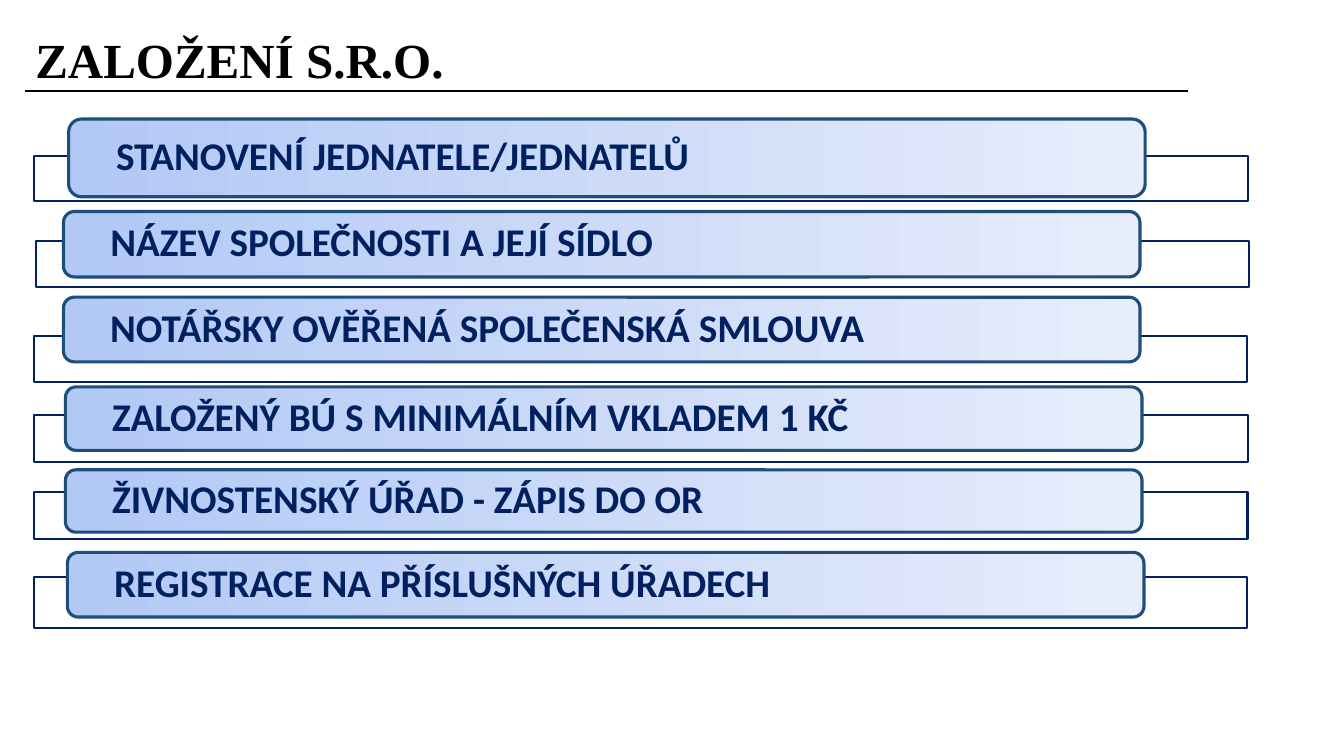
from lxml import etree
from pptx import Presentation
from pptx.dml.color import RGBColor
from pptx.enum.shapes import MSO_CONNECTOR, MSO_SHAPE
from pptx.enum.text import MSO_ANCHOR, PP_ALIGN
from pptx.oxml.ns import qn
from pptx.util import Cm, Pt

NAVY = "002060"
BAR_WIDTH = 27.13

# text, frame (left, top, width, height), bar (left, top, height), all in cm
STEPS = [
    ("STANOVENÍ JEDNATELE/JEDNATELŮ", (0.86, 3.94, 30.6, 1.12), (1.73, 3, 1.96)),
    ("NÁZEV SPOLEČNOSTI A JEJÍ SÍDLO", (0.91, 6.07, 30.56, 1.17), (1.6, 5.33, 1.65)),
    ("NOTÁŘSKY OVĚŘENÁ SPOLEČENSKÁ SMLOUVA", (0.86, 8.46, 30.56, 1.17), (1.6, 7.49, 1.63)),
    ("ZALOŽENÝ BÚ S MINIMÁLNÍM VKLADEM 1 KČ", (0.86, 10.46, 30.6, 1.19), (1.65, 9.75, 1.6)),
    ("ŽIVNOSTENSKÝ ÚŘAD - ZÁPIS DO OR", (0.86, 12.4, 30.58, 1.19), (1.65, 11.84, 1.57)),
    ("REGISTRACE NA PŘÍSLUŠNÝCH ÚŘADECH", (0.86, 14.53, 30.56, 1.3), (1.7, 13.92, 1.63)),
]


def color(hex_code):
    return RGBColor.from_string(hex_code)


def set_text(shape, text, size, font, hex_code, inset_x, inset_y):
    tf = shape.text_frame
    tf.word_wrap = True
    tf.vertical_anchor = MSO_ANCHOR.MIDDLE
    tf.margin_left = tf.margin_right = Cm(inset_x)
    tf.margin_top = tf.margin_bottom = Cm(inset_y)
    p = tf.paragraphs[0]
    p.alignment = PP_ALIGN.LEFT
    p.line_spacing = 0.9
    r = p.add_run()
    r.text = text
    r.font.size = Pt(size)
    r.font.name = font
    r.font.bold = True
    r.font.color.rgb = color(hex_code)


def add_box(s, kind, box, line_hex, line_width):
    sp = s.shapes.add_shape(kind, *map(Cm, box))
    sp.shadow.inherit = False
    sp.line.color.rgb = color(line_hex)
    sp.line.width = Pt(line_width)
    return sp


def add_title(s, left, top, width, height):
    """Place the heading and the rule that underlines it."""
    sp = s.shapes.add_textbox(Cm(left), Cm(top), Cm(width), Cm(height))
    set_text(sp, "ZALOŽENÍ S.R.O.", 35, "Times New Roman", "000000", 0.25, 0.13)
    y = Cm(top + 1.55)
    rule = s.shapes.add_connector(MSO_CONNECTOR.STRAIGHT, Cm(left), y, Cm(left + 29.29), y)
    rule.line.color.rgb = color("000000")
    rule.line.width = Pt(1.5)
    etree.SubElement(rule._element.spPr, qn("a:effectLst"))


def add_step(s, text, frame_box, bar_box):
    """Place an outlined frame with a labelled gradient bar over it."""
    frame = add_box(s, MSO_SHAPE.RECTANGLE, frame_box, NAVY, 1.5)
    frame.fill.solid()
    frame.fill.fore_color.rgb = color("FFFFFF")
    white = frame._element.spPr.find(qn("a:solidFill"))[0]
    etree.SubElement(white, qn("a:alpha"), val="90000")

    left, top, height = bar_box
    bar = add_box(s, MSO_SHAPE.ROUNDED_RECTANGLE, (left, top, BAR_WIDTH, height), "1F4E79", 2.25)
    bar.fill.gradient()
    bar.fill.gradient_angle = 0
    for stop, hex_code in zip(bar.fill.gradient_stops, ("B2C8F5", "E7EDFB")):
        stop.color.rgb = color(hex_code)
    set_text(bar, text, 28, "Calibri", NAVY, 1.1, 0)


def main():
    prs = Presentation()
    prs.slide_width, prs.slide_height = Cm(33.87), Cm(19.05)
    s = prs.slides.add_slide(prs.slide_layouts[6])
    add_title(s, 0.64, 0.74, 25.53, 1.7)
    for text, frame_box, bar_box in STEPS:
        add_step(s, text, frame_box, bar_box)
    prs.save("out.pptx")


if __name__ == "__main__":
    main()
